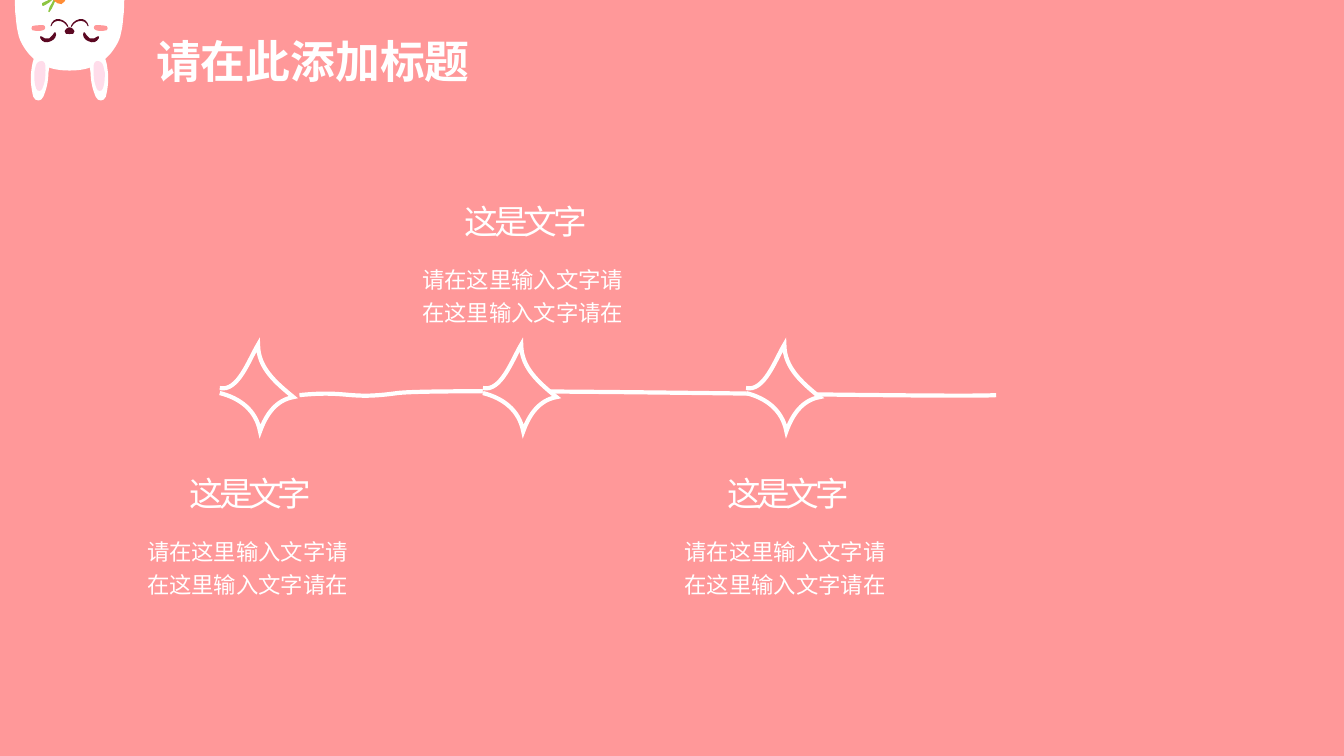
from pptx import Presentation
from pptx.dml.color import RGBColor
from pptx.enum.text import MSO_ANCHOR, MSO_AUTO_SIZE, PP_ALIGN
from pptx.oxml.ns import qn
from pptx.util import Inches, Pt
from lxml import etree

CENTER, LEFT = PP_ALIGN.CENTER, PP_ALIGN.LEFT
TOP = MSO_ANCHOR.TOP
GROW = MSO_AUTO_SIZE.SHAPE_TO_FIT_TEXT

FONT = "Noto Sans CJK JP"
COLORS = {"pink": "FF9899", "white": "FFFFFF", "wine": "5B0822",
          "blush": "FFDCEA", "leaf": "8DC541", "carrot": "FF8D35"}
AXIS = 0.69  # centre line of the rabbit

# Outlines: a start point, then three points for each cubic curve
HEAD = [(.69, -.5), (.63, -.5), (.56, -.5), (.5, -.5), (.42, -.49), (.33, -.48), (.27, -.43),
        (.25, -.44), (.21, -.44), (.19, -.41), (.17, -.38), (.16, -.32), (.16, -.28),
        (.15, -.24), (.15, -.19), (.15, -.15), (.14, -.06), (.15, .02), (.15, .11),
        (.16, .18), (.16, .26), (.18, .33), (.19, .4), (.24, .48), (.29, .54),
        (.39, .65), (.51, .7), (.69, .7)]
NOSE = [(.69, .28), (.67, .28), (.65, .3), (.65, .31), (.65, .33), (.66, .33), (.69, .33)]
MOUTH = [(.51, .26), (.52, .22), (.56, .2), (.6, .21), (.64, .22), (.66, .25), (.68, .28),
         (.68, .24), (.64, .2), (.59, .19), (.55, .18), (.51, .21), (.5, .26)]
EYE = [(.4, .38), (.42, .42), (.46, .43), (.5, .41), (.54, .4), (.57, .35), (.55, .32),
       (.55, .32), (.54, .32), (.54, .32), (.53, .33), (.53, .34), (.52, .35),
       (.51, .36), (.5, .37), (.49, .38), (.46, .39), (.43, .38), (.41, .36),
       (.4, .35), (.39, .37), (.4, .38)]
CHEEK = [(.32, .3), (.36, .31), (.4, .31), (.43, .3), (.46, .29), (.45, .25), (.43, .25),
         (.39, .25), (.35, .25), (.32, .26), (.31, .27), (.31, .29), (.32, .3)]
EAR = [(.48, .73), (.48, .81), (.46, .89), (.43, .96), (.41, 1.01), (.35, 1.01), (.33, .96),
       (.31, .88), (.3, .79), (.31, .71), (.32, .63), (.33, .55), (.4, .5),
       (.42, .48), (.46, .51), (.46, .53), (.5, .58), (.49, .67), (.48, .73)]
INNER = [(.45, .74), (.45, .79), (.44, .83), (.42, .88), (.41, .91), (.37, .91), (.36, .88),
         (.34, .83), (.34, .78), (.34, .72), (.35, .69), (.35, .62), (.39, .61),
         (.47, .58), (.45, .7), (.45, .74)]
STEM = [(.54, -.02), (.53, 0), (.52, .02), (.51, .04), (.5, .06), (.48, .08), (.48, .11),
        (.47, .12), (.49, .12), (.49, .12), (.51, .1), (.52, .07), (.53, .05),
        (.54, .03), (.55, .01), (.55, -.02)]
SPRIG = [(.53, -.04), (.5, 0), (.46, .01), (.42, .03), (.41, .04), (.42, .07), (.43, .06),
         (.47, .04), (.52, .01), (.54, -.03)]
ROOT = [(.54, .01), (.56, .03), (.58, .04), (.61, .04), (.64, .03), (.65, 0), (.66, -.03),
        (.68, -.07), (.69, -.11), (.71, -.15), (.73, -.18), (.76, -.24), (.75, -.28),
        (.74, -.36), (.61, -.24), (.58, -.21), (.56, -.19), (.53, -.18), (.51, -.16),
        (.45, -.1), (.49, -.03), (.54, .01)]
TRACK = [(2.97, 3.92), (3.47, 3.87), (3.44, 3.97), (3.94, 3.9),
         (4.4, 3.84), (9.43, 3.95), (9.88, 3.92)]
STAR = [(0, .43), (.18, .47), (.29, .15), (.38, 0), (.38, .23), (.56, .38), (.73, .52),
        (.56, .55), (.46, .69), (.4, .86), (.36, .65), (.2, .53), (0, .48)]


def rgb(name):
    return RGBColor.from_string(COLORS[name])


def flip(curve):
    return [(2 * AXIS - x, y) for x, y in curve]


def bend(shape):
    """Join each three straight steps into one cubic curve."""
    steps = list(shape._element.iter(qn("a:lnTo")))
    for i in range(0, len(steps), 3):
        first, *rest = steps[i:i + 3]
        for step in rest:
            first.append(step[0])
            step.getparent().remove(step)
        first.tag = qn("a:cubicBezTo")


def draw(shapes, curve, fill=None, line=None, width=3, close=True):
    dots = [(Inches(x), Inches(y)) for x, y in curve]
    pen = shapes.build_freeform(*dots[0])
    pen.add_line_segments(dots[1:], close=close)
    shape = pen.convert_to_shape()
    bend(shape)
    shape.shadow.inherit = False
    if fill:
        shape.fill.solid()
        shape.fill.fore_color.rgb = rgb(fill)
    else:
        shape.fill.background()
    if line:
        shape.line.color.rgb = rgb(line)
        shape.line.width = Pt(width)
        etree.SubElement(shape.line._get_or_add_ln(), qn("a:miter"), lim="800000")
    else:
        shape.line.fill.background()


def write(shape, text, size, bold=False, align=LEFT, gap=None, space=None):
    frame = shape.text_frame
    frame.word_wrap = True
    frame.auto_size = GROW
    frame.vertical_anchor = TOP
    para = frame.paragraphs[0]
    para.alignment = align
    if space:
        para.line_spacing = space
    run = para.add_run()
    run.text = text
    font = run.font
    font.size, font.bold, font.name = Pt(size), bold, FONT
    font.color.rgb = rgb("white")
    props = run._r.get_or_add_rPr()
    etree.SubElement(props, qn("a:ea"), typeface=FONT)
    if gap:
        props.set("spc", str(gap * 100))


def rabbit(slide):
    shapes = slide.shapes.add_group_shape().shapes
    draw(shapes, HEAD + flip(HEAD)[-2::-1], "white")
    draw(shapes, NOSE + flip(NOSE)[-2::-1], "wine", "wine", 1.13)
    # Parts that come in pairs
    for part, fill in ((MOUTH, "wine"), (EYE, "wine"), (CHEEK, "pink"),
                       (EAR, "white"), (INNER, "blush")):
        draw(shapes, part, fill)
        draw(shapes, flip(part), fill)
    # Carrot
    for part, fill in ((STEM, "leaf"), (SPRIG, "leaf"), (ROOT, "carrot")):
        draw(shapes, part, fill)


def note(slide, left, top):
    def box(x, y, w, h):
        return slide.shapes.add_textbox(Inches(x), Inches(y), Inches(w), Inches(h))
    write(box(left, top, 1.65, 0.5), "这是文字", 24, align=CENTER, gap=-3)
    write(box(left - 0.3, top + 0.58, 2.25, 0.77),
          "请在这里输入文字请在这里输入文字请在", 16, space=1.25)


def main():
    deck = Presentation()
    deck.slide_width, deck.slide_height = Inches(13.33), Inches(7.5)
    slide = deck.slides.add_slide(deck.slide_layouts[5])
    slide.background.fill.solid()
    slide.background.fill.fore_color.rgb = rgb("pink")

    # Heading
    rabbit(slide)
    title = slide.shapes.title
    title.left, title.top = Inches(1.4), Inches(0.28)
    title.width, title.height = Inches(3.41), Inches(0.63)
    write(title, "请在此添加标题", 32, bold=True, align=CENTER)

    # Timeline
    draw(slide.shapes, TRACK, line="white", close=False)
    for i in range(3):
        star = [(x + 2.18 + 2.61 * i, y + 3.42) for x, y in STAR]
        draw(slide.shapes, star, "pink", "white", close=False)

    # Notes below and above the line
    for left, top in ((1.66, 4.64), (4.39, 1.94), (6.99, 4.64)):
        note(slide, left, top)

    deck.save("out.pptx")


if __name__ == "__main__":
    main()
